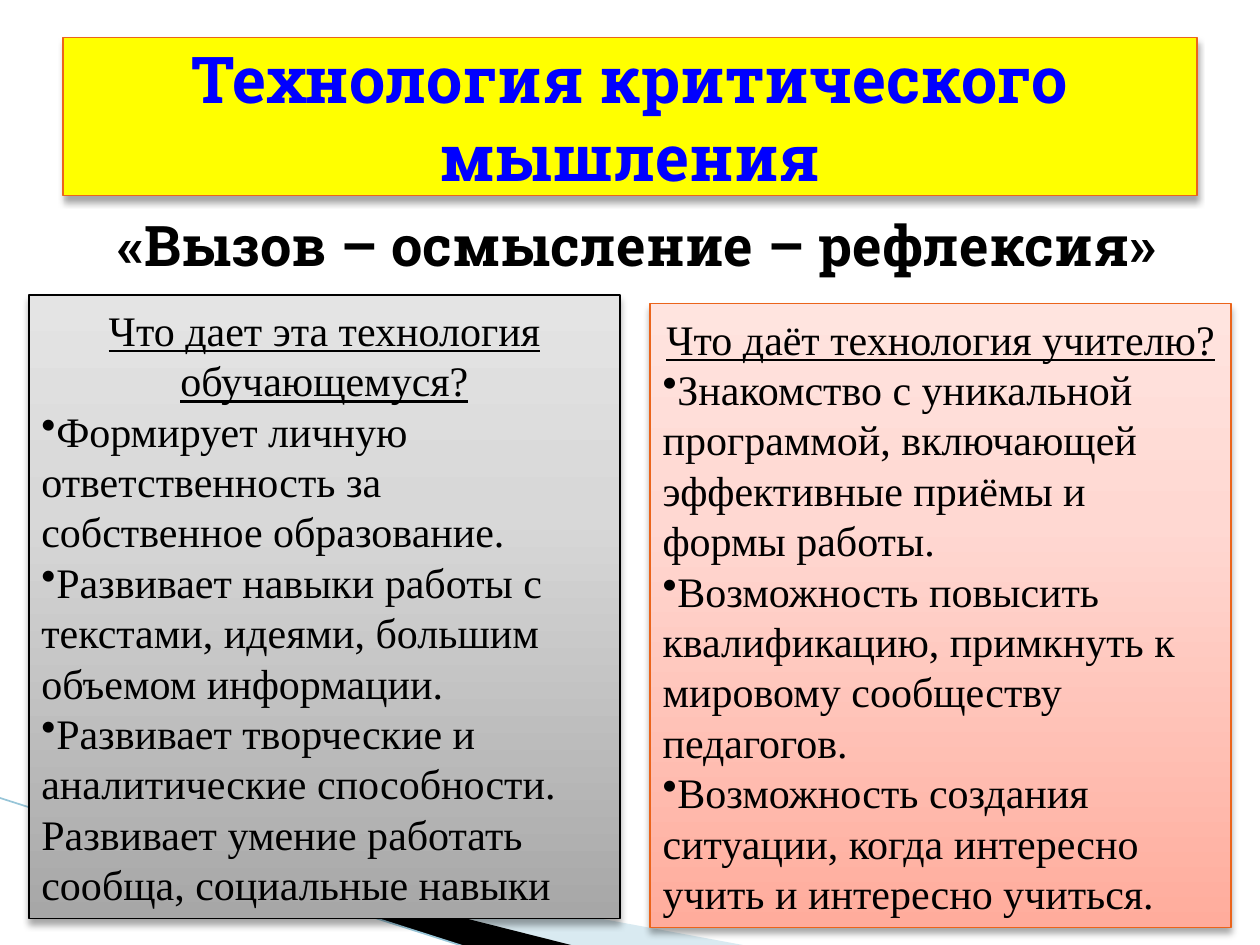
from lxml.etree import SubElement
from pptx import Presentation
from pptx.dml.color import RGBColor
from pptx.enum.shapes import MSO_CONNECTOR, MSO_SHAPE
from pptx.enum.text import MSO_ANCHOR, PP_ALIGN
from pptx.oxml.ns import qn
from pptx.util import Inches, Pt

SLAB, SERIF = "Roboto Slab", "Times New Roman"
BLACK, ORANGE = "000000", "EB641B"

LEARNER_POINTS = [
    "Формирует личную ответственность за собственное образование.",
    "Развивает навыки работы с текстами, идеями, большим объемом информации.",
    "Развивает творческие и аналитические способности.",
]
TEACHER_POINTS = [
    "Знакомство с уникальной программой, включающей эффективные приёмы и формы работы.",
    "Возможность повысить квалификацию, примкнуть к мировому сообществу педагогов.",
    "Возможность создания ситуации, когда интересно учить и интересно учиться.",
]


def color(value):
    return RGBColor.from_string(value)


def add_child(parent, tag, **attributes):
    child = SubElement(parent, qn(tag))
    for name, value in attributes.items():
        child.set(name, str(value))
    return child


def add_span(para, text, font, size, fill, bold=False, underline=False):
    span = para.add_run()
    span.text = text
    span.font.name = font
    span.font.size = Pt(size)
    span.font.bold = bold
    span.font.underline = underline
    span.font.color.rgb = color(fill)


def add_sweep(page, points, fill, opacity=100):
    """Draw one of the slanted bands in the bottom corner."""
    corners = [(Inches(x), Inches(y)) for x, y in points]
    builder = page.shapes.build_freeform(*corners[0])
    builder.add_line_segments(corners[1:], close=True)
    sweep = builder.convert_to_shape()
    sweep.shadow.inherit = False
    sweep.fill.solid()
    sweep.fill.fore_color.rgb = color(fill)
    sweep.line.fill.background()
    if opacity < 100:
        tone = sweep.element.spPr.find(".//" + qn("a:srgbClr"))
        add_child(tone, "a:alpha", val=opacity * 1000)


def add_corner_line(page):
    line = page.shapes.add_connector(
        MSO_CONNECTOR.STRAIGHT, Inches(-0.01), Inches(6.33), Inches(3.71), Inches(7.52))
    line.line.color.rgb = color("97C5D8")
    line.line.width = Pt(0.95)
    add_child(line.element.spPr, "a:effectLst")


def add_panel(page, left, top, width, height, border):
    """Add a bordered rectangle with a soft shadow below it."""
    panel = page.shapes.add_shape(
        MSO_SHAPE.RECTANGLE, Inches(left), Inches(top), Inches(width), Inches(height))
    panel.line.color.rgb = color(border)
    panel.line.width = Pt(0.75)
    panel.shadow.inherit = False
    effects = panel.element.spPr.find(qn("a:effectLst"))
    shadow = add_child(effects, "a:outerShdw", blurRad=Pt(4), dist=Pt(3),
                       dir=90 * 60000, rotWithShape=0)
    add_child(add_child(shadow, "a:srgbClr", val=BLACK), "a:alpha", val=35000)
    panel.text_frame.word_wrap = True
    panel.text_frame.vertical_anchor = MSO_ANCHOR.MIDDLE
    return panel


def fill_gradient(shape, stops):
    shape.fill.gradient()
    shape.fill.gradient_angle = 90
    stop_list = shape.element.spPr.find(".//" + qn("a:gsLst"))
    for old_stop in list(stop_list):
        stop_list.remove(old_stop)
    for position, tone in zip((0, 65, 100), stops):
        stop = add_child(stop_list, "a:gs", pos=position * 1000)
        add_child(stop, "a:srgbClr", val=tone)


def add_title(page):
    panel = add_panel(page, 0.5, 0.3, 9, 1.25, ORANGE)
    panel.fill.solid()
    panel.fill.fore_color.rgb = color("FFFF00")
    para = panel.text_frame.paragraphs[0]
    para.alignment = PP_ALIGN.CENTER
    add_span(para, "Технология критического мышления", SLAB, 36.9, "0000FF", bold=True)


def add_motto(page):
    box = page.shapes.add_textbox(Inches(0.5), Inches(1.62), Inches(9), Inches(4.95))
    box.text_frame.word_wrap = True
    para = box.text_frame.paragraphs[0]
    para.alignment = PP_ALIGN.CENTER
    properties = para._p.get_or_add_pPr()
    properties.set("marL", str(Inches(0.4)))
    properties.set("indent", str(Inches(-0.28)))
    add_span(para, "«Вызов – осмысление – рефлексия»", SLAB, 32, BLACK, bold=True)


def add_benefits(page, left, top, width, border, stops, heading, points, closing=None):
    panel = add_panel(page, left, top, width, 4.95, border)
    fill_gradient(panel, stops)
    frame = panel.text_frame
    para = frame.paragraphs[0]
    para.alignment = PP_ALIGN.CENTER
    add_span(para, heading, SERIF, 24, BLACK, underline=True)
    for point in points:
        para = frame.add_paragraph()
        para.alignment = PP_ALIGN.LEFT
        add_child(para._p.get_or_add_pPr(), "a:buChar", char="•")
        add_span(para, point, SERIF, 24, BLACK)
    if closing:
        para = frame.add_paragraph()
        para.alignment = PP_ALIGN.LEFT
        add_span(para, closing, SERIF, 24, BLACK)


def main():
    deck = Presentation()
    deck.slide_width, deck.slide_height = Inches(10), Inches(7.5)
    page = deck.slides.add_slide(deck.slide_layouts[6])

    add_sweep(page, [(0.55, 6.51), (5.95, 7.51), (4.56, 7.51), (0.55, 6.5)], "A0CBDC", 40)
    add_sweep(page, [(0.53, 6.49), (4.57, 7.51), (3.72, 7.52), (0.54, 6.5)], BLACK)
    add_corner_line(page)
    add_motto(page)
    add_title(page)
    add_benefits(page, 0.23, 2.34, 4.69, BLACK, ("A7A7A7", "D8D8D8", "E4E4E4"),
                 "Что дает эта технология обучающемуся?", LEARNER_POINTS,
                 "Развивает умение работать сообща, социальные навыки")
    add_benefits(page, 5.16, 2.41, 4.61, ORANGE, ("FFAC9C", "FFD8D2", "FFE4DF"),
                 "Что даёт технология учителю?", TEACHER_POINTS)
    deck.save("out.pptx")


if __name__ == "__main__":
    main()
